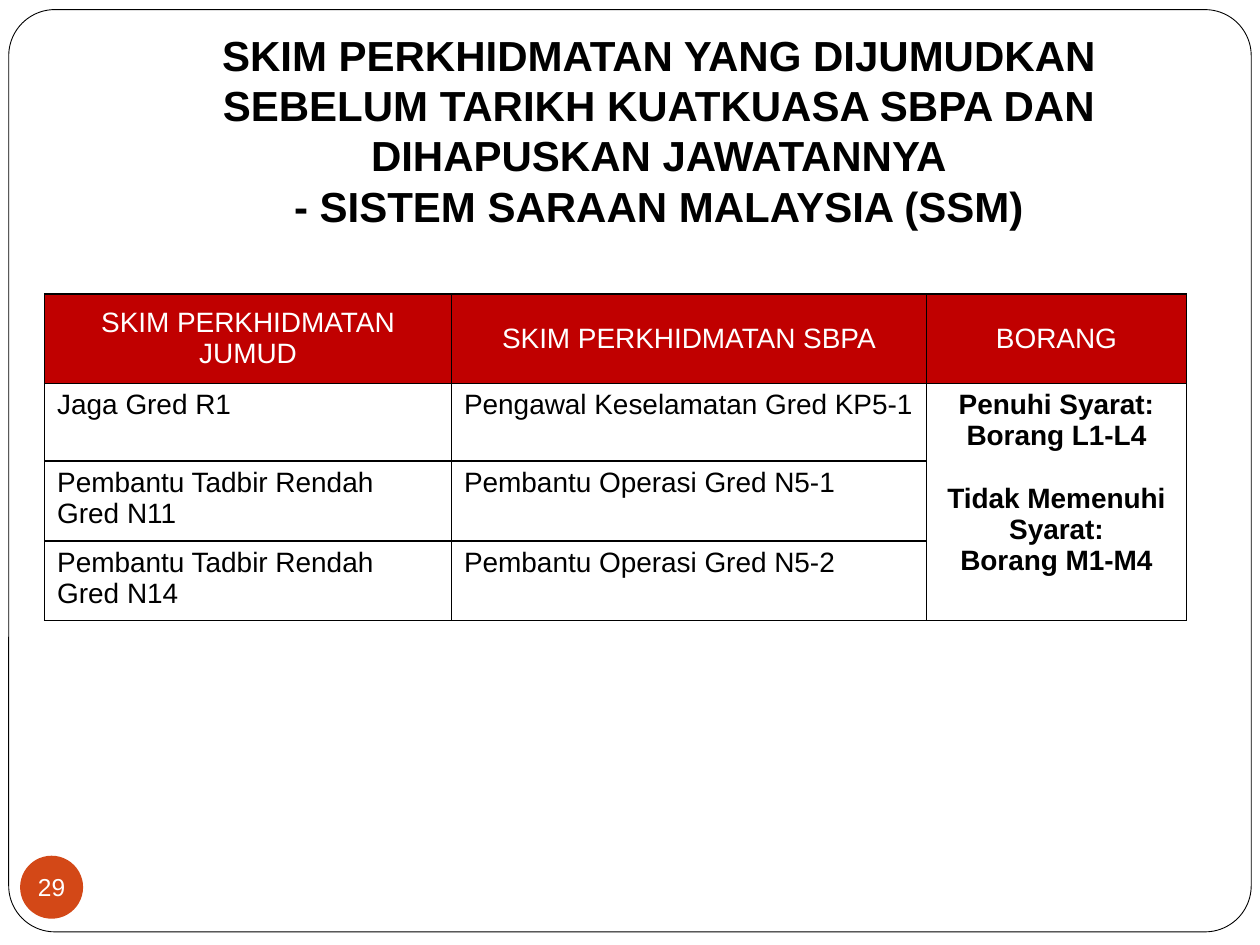
from lxml import etree
from pptx import Presentation
from pptx import util as u
from pptx.dml.color import RGBColor
from pptx.enum import shapes, text
from pptx.oxml.ns import qn

# Content
TITLE = ["SKIM PERKHIDMATAN YANG DIJUMUDKAN SEBELUM TARIKH KUATKUASA SBPA DAN "
         "DIHAPUSKAN JAWATANNYA",
         "- SISTEM SARAAN MALAYSIA (SSM)"]
HEADERS = ["SKIM PERKHIDMATAN JUMUD", "SKIM PERKHIDMATAN SBPA", "BORANG"]
SCHEMES = [("Jaga Gred R1", "Pengawal Keselamatan Gred KP5-1"),
           ("Pembantu Tadbir Rendah Gred N11", "Pembantu Operasi Gred N5-1"),
           ("Pembantu Tadbir Rendah Gred N14", "Pembantu Operasi Gred N5-2")]
# Each form line with the space before it
FORMS = [("Penuhi Syarat: Borang L1-L4", 0),
         ("Tidak Memenuhi Syarat:", 18),
         ("Borang M1-M4", 0)]
PAGE_NUMBER = "29"

BLACK, WHITE, RED, ORANGE = "000000", "FFFFFF", "C00000", "D34817"
COLUMN_WIDTHS = [232.5, 271.5, 148.5]
ROW_HEIGHTS = [51] + [44.5] * len(SCHEMES)
CENTER = text.PP_ALIGN.CENTER


def color(value):
    return RGBColor.from_string(value)


def add_run(paragraph, words, size, font_color, bold=False):
    run = paragraph.add_run()
    run.text = words
    run.font.name = "Arial"
    run.font.size = u.Pt(size)
    run.font.bold = bold
    run.font.color.rgb = color(font_color)


def set_margins(frame, left, top, right, bottom):
    frame.margin_left, frame.margin_top = u.Pt(left), u.Pt(top)
    frame.margin_right, frame.margin_bottom = u.Pt(right), u.Pt(bottom)


def add_filled_shape(slide, kind, box, fill):
    shape = slide.shapes.add_shape(kind, *map(u.Pt, box))
    shape.shadow.inherit = False
    shape.fill.solid()
    shape.fill.fore_color.rgb = color(fill)
    return shape


def style_cell(cell, fill):
    properties = cell._tc.get_or_add_tcPr()
    for side in ("a:lnL", "a:lnR", "a:lnT", "a:lnB"):
        line = etree.SubElement(properties, qn(side), w=str(u.Pt(1)))
        solid = etree.SubElement(line, qn("a:solidFill"))
        etree.SubElement(solid, qn("a:srgbClr"), val=BLACK)
    cell.fill.solid()
    cell.fill.fore_color.rgb = color(fill)


presentation = Presentation()
presentation.slide_width, presentation.slide_height = u.Pt(720), u.Pt(540)
slide = presentation.slides.add_slide(presentation.slide_layouts[6])

# Rounded frame
frame_shape = add_filled_shape(slide, shapes.MSO_SHAPE.ROUNDED_RECTANGLE,
                               (5, 5.5, 710, 527), WHITE)
frame_shape.adjustments[0] = 0.05
frame_shape.line.color.rgb = color(BLACK)
frame_shape.line.width = u.Pt(0.5)

# Title
title_frame = slide.shapes.add_textbox(*map(u.Pt, (70.5, 49, 612, 90))).text_frame
title_frame.word_wrap = True
title_frame.vertical_anchor = text.MSO_ANCHOR.BOTTOM
set_margins(title_frame, 7.2, 3.6, 7.2, 7.2)
paragraph = title_frame.paragraphs[0]
paragraph.alignment = CENTER
paragraph.line_spacing = u.Pt(28.75)
for index, words in enumerate(TITLE):
    if index:
        paragraph.add_line_break()
    add_run(paragraph, words, 24, BLACK, bold=True)

# Table
table = slide.shapes.add_table(
    len(ROW_HEIGHTS), len(COLUMN_WIDTHS), u.Pt(25.5), u.Pt(168),
    u.Pt(sum(COLUMN_WIDTHS)), u.Pt(sum(ROW_HEIGHTS))).table
for column, width in zip(table.columns, COLUMN_WIDTHS):
    column.width = u.Pt(width)
for row, height in zip(table.rows, ROW_HEIGHTS):
    row.height = u.Pt(height)
for row_index in range(len(ROW_HEIGHTS)):
    for column_index in range(len(COLUMN_WIDTHS)):
        style_cell(table.cell(row_index, column_index), WHITE if row_index else RED)

for column_index, words in enumerate(HEADERS):
    cell = table.cell(0, column_index)
    cell.vertical_anchor = text.MSO_ANCHOR.MIDDLE
    paragraph = cell.text_frame.paragraphs[0]
    paragraph.alignment = CENTER
    add_run(paragraph, words, 16, WHITE)

for row_index, scheme in enumerate(SCHEMES, start=1):
    for column_index, words in enumerate(scheme):
        paragraph = table.cell(row_index, column_index).text_frame.paragraphs[0]
        add_run(paragraph, words, 16, BLACK)

# Forms shared by all schemes
forms_cell = table.cell(1, 2)
forms_cell.merge(table.cell(len(SCHEMES), 2))
forms_frame = forms_cell.text_frame
for index, (words, space) in enumerate(FORMS):
    paragraph = forms_frame.add_paragraph() if index else forms_frame.paragraphs[0]
    paragraph.alignment = CENTER
    if space:
        paragraph.space_before = u.Pt(space)
    add_run(paragraph, words, 16, BLACK, bold=True)

# Page number
badge = add_filled_shape(slide, shapes.MSO_SHAPE.OVAL, (11.5, 489, 36, 36), ORANGE)
badge.line.fill.background()
badge_frame = badge.text_frame
badge_frame.word_wrap = False
badge_frame.vertical_anchor = text.MSO_ANCHOR.MIDDLE
set_margins(badge_frame, 0, 0, 0, 0)
paragraph = badge_frame.paragraphs[0]
paragraph.alignment = CENTER
add_run(paragraph, PAGE_NUMBER, 14, WHITE)

presentation.save("out.pptx")
